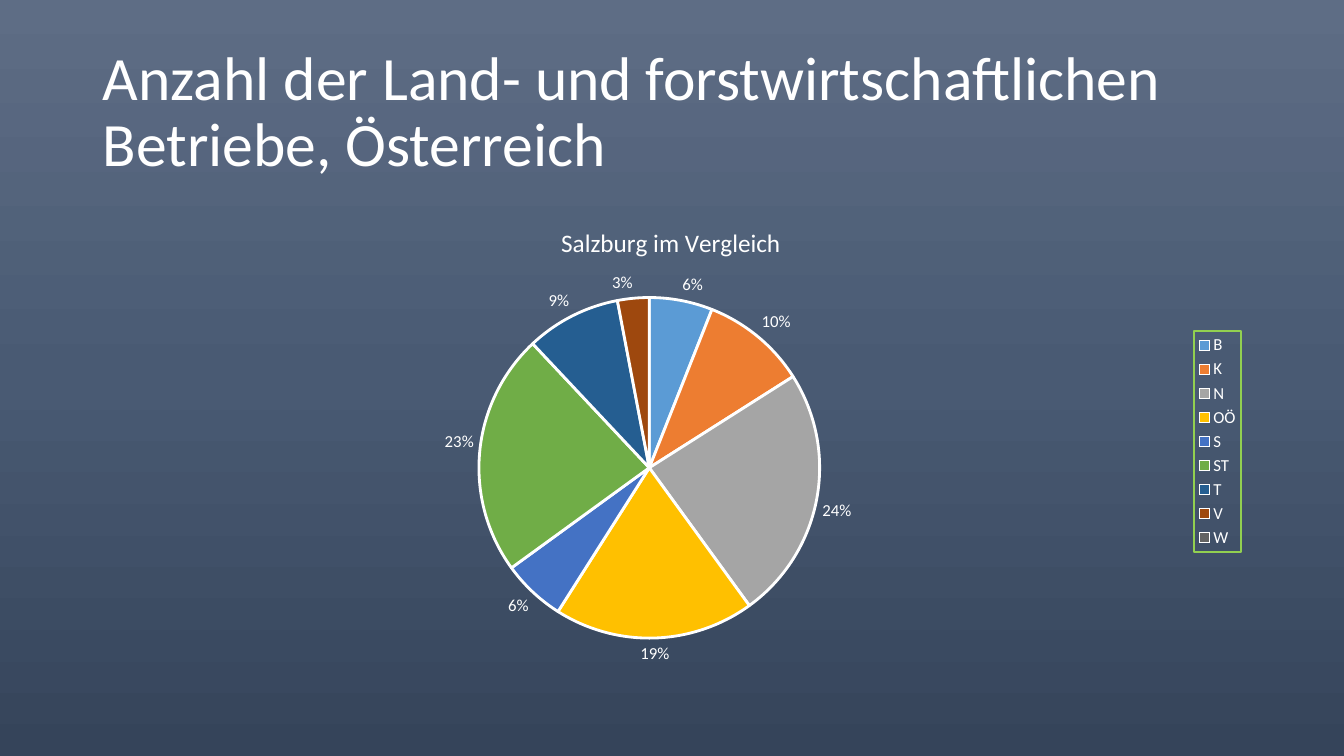
"""Build a slide with a pie chart of Austrian farm and forestry holdings."""
from copy import deepcopy

from lxml import etree
from pptx import Presentation
from pptx.chart.data import CategoryChartData
from pptx.dml.color import RGBColor
from pptx.enum.chart import XL_CHART_TYPE, XL_LABEL_POSITION, XL_LEGEND_POSITION
from pptx.enum.text import MSO_ANCHOR
from pptx.oxml import parse_xml
from pptx.oxml.ns import qn
from pptx.util import Inches, Pt

PIE = XL_CHART_TYPE.PIE
OUT = XL_LABEL_POSITION.OUTSIDE_END
RIGHT = XL_LEGEND_POSITION.RIGHT
MIDDLE = MSO_ANCHOR.MIDDLE

TITLE = "Anzahl der Land- und forstwirtschaftlichen Betriebe, Österreich"
HEAD = "Salzburg im Vergleich"
FONT = "Calibri"
COLORS = {"text": "FFFFFF", "frame": "92D050"}
SHADES = [(0, "5E6D85"), (0.5, "495A73"), (1, "35445A")]
SLICES = [
    ("B", 6, "5B9BD5"), ("K", 10, "ED7D31"), ("N", 24, "A5A5A5"),
    ("OÖ", 19, "FFC000"), ("S", 6, "4472C4"), ("ST", 23, "70AD47"),
    ("T", 9, "255E91"), ("V", 3, "9E480E"), ("W", 0, "636363"),
]
WIDE, HIGH = 13.33, 7.5
LEFT, SPAN = 0.92, 11.5
PLOT = {"x": 0.33, "y": 0.2, "w": 0.3, "h": 0.71}
KEY = {"x": 0.95, "y": 0.27, "w": 0.04, "h": 0.46}
HEAD_AT = {"x": 0.4, "y": 0.04}
NS = ('xmlns:c="http://schemas.openxmlformats.org/drawingml/2006/chart" '
      'xmlns:a="http://schemas.openxmlformats.org/drawingml/2006/main"')


def style(font, size):
    font.name, font.size = FONT, Pt(size)
    font.bold = False
    font.color.rgb = RGBColor.from_string(COLORS["text"])


def place(node, spot, after=None, inner=False):
    for old in node.findall(qn("c:layout")):
        node.remove(old)
    lay = etree.Element(qn("c:layout"))
    man = etree.SubElement(lay, qn("c:manualLayout"))
    if inner:
        etree.SubElement(man, qn("c:layoutTarget")).set("val", "inner")
    for axis in "xy":
        etree.SubElement(man, qn(f"c:{axis}Mode")).set("val", "edge")
    for side, share in spot.items():
        etree.SubElement(man, qn(f"c:{side}")).set("val", str(share))
    if after is None:
        node.insert(0, lay)
    else:
        node.find(qn(after)).addnext(lay)


def paint(slide):
    fill = slide.background.fill
    fill.gradient()
    fill.gradient_angle = 270
    stops = slide.element.xpath(".//a:gsLst")[0]
    stops.append(deepcopy(stops[0]))
    for stop, (pos, shade) in zip(fill.gradient_stops, SHADES):
        stop.position = pos
        stop.color.rgb = RGBColor.from_string(shade)


def add_title(slide):
    box = slide.shapes.add_textbox(*map(Inches, (LEFT, 0.4, SPAN, 1.45)))
    frame = box.text_frame
    frame.word_wrap, frame.vertical_anchor = True, MIDDLE
    frame.text = TITLE
    line = frame.paragraphs[0]
    line.line_spacing = 0.9
    style(line.runs[0].font, 44)


def add_pie(slide):
    data = CategoryChartData()
    data.categories = [name for name, _, _ in SLICES]
    data.add_series("Series 1", [val for _, val, _ in SLICES])
    spot = map(Inches, (LEFT, 2, SPAN, 4.76))
    chart = slide.shapes.add_chart(PIE, *spot, data).chart
    style(chart.font, 10)

    chart.has_title = True
    head = chart.chart_title
    head.text_frame.text = HEAD
    style(head.text_frame.paragraphs[0].runs[0].font, 18)
    place(head._element, HEAD_AT, "c:tx")

    plot = chart.plots[0]
    plot.vary_by_categories = True
    place(chart._chartSpace.chart.plotArea, PLOT, inner=True)
    for i, (_, _, shade) in enumerate(SLICES):
        form = plot.series[0].points[i].format
        form.fill.solid()
        form.fill.fore_color.rgb = RGBColor.from_string(shade)
        form.line.color.rgb = RGBColor.from_string(COLORS["text"])
        form.line.width = Pt(2)

    plot.has_data_labels = True
    tags = plot.data_labels
    tags.show_percentage, tags.show_value = True, False
    tags.number_format, tags.number_format_is_linked = "0%", False
    tags.position = OUT
    style(tags.font, 12)

    chart.has_legend = True
    key = chart.legend
    key.position, key.include_in_layout = RIGHT, False
    style(key.font, 12)
    place(key._element, KEY, "c:legendPos")
    key._element.find(qn("c:txPr")).addprevious(parse_xml(
        f'<c:spPr {NS}><a:noFill/><a:ln w="{Pt(1.5)}"><a:solidFill>'
        f'<a:srgbClr val="{COLORS["frame"]}"/></a:solidFill></a:ln></c:spPr>'))


def main():
    prs = Presentation()
    prs.slide_width, prs.slide_height = Inches(WIDE), Inches(HIGH)
    slide = prs.slides.add_slide(prs.slide_layouts[6])
    paint(slide)
    add_title(slide)
    add_pie(slide)
    prs.save("out.pptx")


if __name__ == "__main__":
    main()
